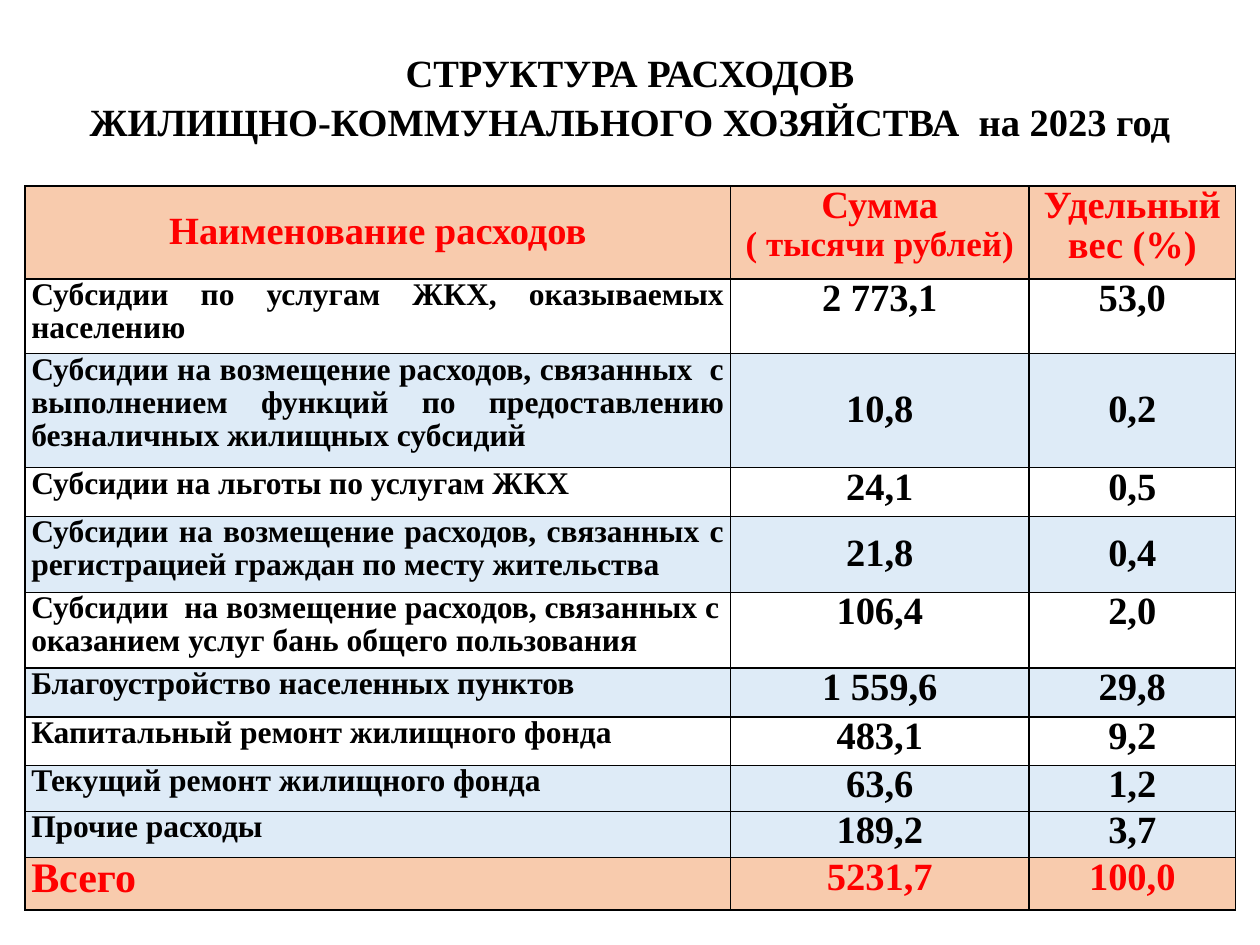
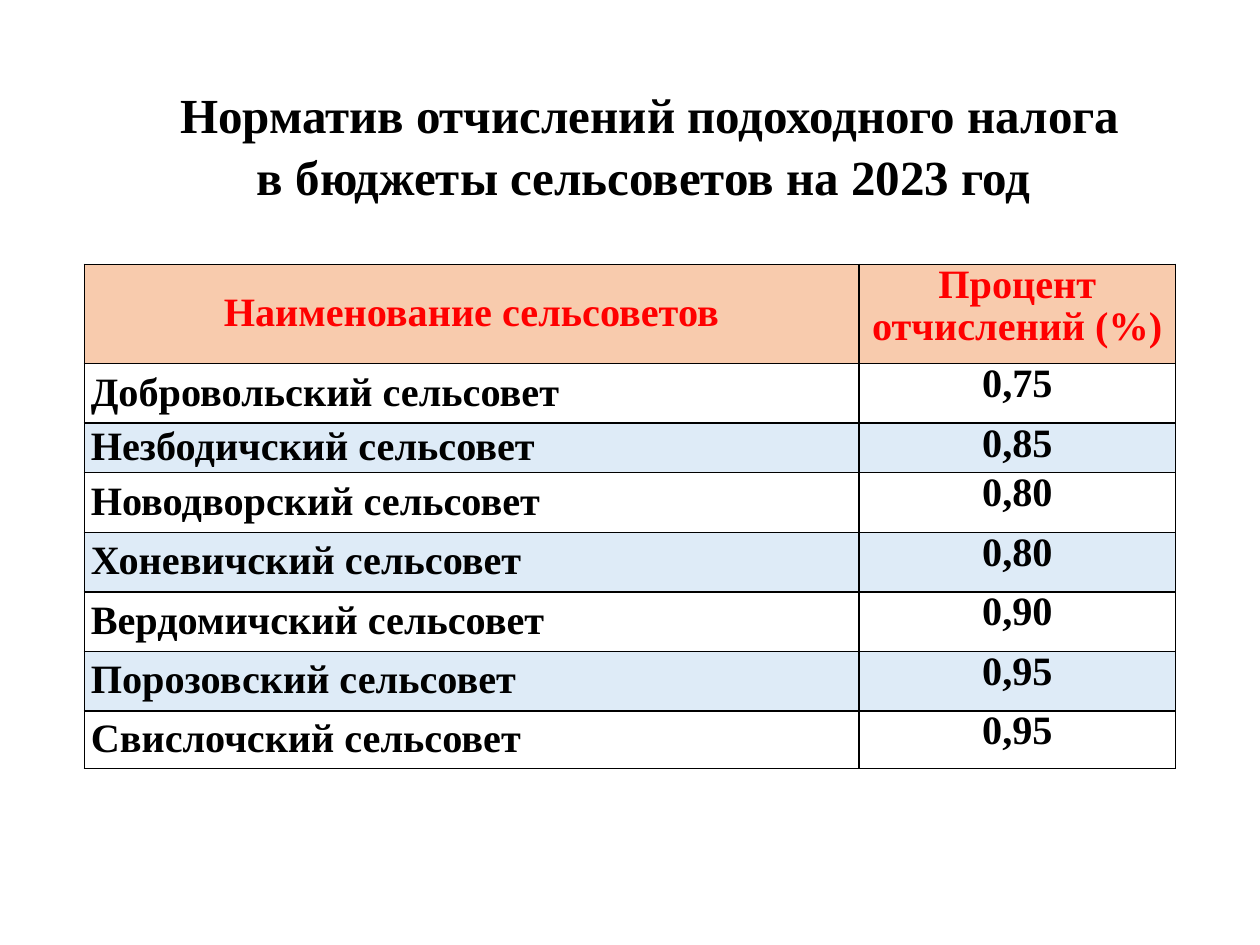
from dataclasses import dataclass
from itertools import cycle

from lxml.etree import SubElement
from pptx import Presentation
from pptx.dml.color import RGBColor
from pptx.enum.text import MSO_ANCHOR, PP_ALIGN
from pptx.oxml.ns import qn
from pptx.util import Cm, Pt

FONT = "Times New Roman"
COLOURS = {
    "text": "000000",
    "accent": "FF0000",
    "heading": "F8CBAD",
    "band": "DEEBF7",
    "plain": "FFFFFF",
}
LEFT, CENTER, JUSTIFY = PP_ALIGN.LEFT, PP_ALIGN.CENTER, PP_ALIGN.JUSTIFY
TOP, MIDDLE = MSO_ANCHOR.TOP, MSO_ANCHOR.MIDDLE


@dataclass
class Row:
    height: float
    texts: tuple
    fill: str = "plain"
    colour: str = "text"
    name_size: int = 18
    value_sizes: tuple = (22,)
    name_align: PP_ALIGN = LEFT
    name_anchor: MSO_ANCHOR = TOP
    value_anchor: MSO_ANCHOR = TOP


EXPENSE_ROWS = [
    Row(1.87, ("Наименование расходов", "Сумма\n( тысячи рублей)", "Удельный вес (%)"),
        "heading", "accent", 22, (22, 20), CENTER, MIDDLE),
    Row(1.51, ("Субсидии по услугам ЖКХ, оказываемых населению", "2 773,1", "53,0"),
        name_align=JUSTIFY),
    Row(2.3, ("Субсидии на возмещение расходов, связанных  с выполнением функций "
              "по предоставлению безналичных жилищных субсидий", "10,8", "0,2"),
        "band", name_align=JUSTIFY, value_anchor=MIDDLE),
    Row(0.98, ("Субсидии на льготы по услугам ЖКХ", "24,1", "0,5")),
    Row(1.53, ("Субсидии на возмещение расходов, связанных с регистрацией граждан "
               "по месту жительства", "21,8", "0,4"),
        "band", name_align=JUSTIFY, value_anchor=MIDDLE),
    Row(1.53, ("Субсидии  на возмещение расходов, связанных с оказанием услуг бань "
               "общего пользования", "106,4", "2,0")),
    Row(0.98, ("Благоустройство населенных пунктов", "1 559,6", "29,8"), "band"),
    Row(0.98, ("Капитальный ремонт жилищного фонда", "483,1", "9,2")),
    Row(0.93, ("Текущий ремонт жилищного фонда", "63,6", "1,2"), "band"),
    Row(0.93, ("Прочие расходы", "189,2", "3,7"), "band"),
    Row(1.06, ("Всего", "5231,7", "100,0"), "heading", "accent", 24),
]

COUNCILS = [
    ("Добровольский", "0,75", 1.2),
    ("Незбодичский", "0,85", 1.0),
    ("Новодворский", "0,80", 1.2),
    ("Хоневичский", "0,80", 1.2),
    ("Вердомичский", "0,90", 1.2),
    ("Порозовский", "0,95", 1.2),
    ("Свислочский", "0,95", 1.16),
]


def write_text(frame, text, *, sizes, colour="text", align=CENTER, spacing=0.95):
    frame.word_wrap = True
    for index, (line, size) in enumerate(zip(text.split("\n"), cycle(sizes))):
        paragraph = frame.add_paragraph() if index else frame.paragraphs[0]
        paragraph.alignment = align
        paragraph.line_spacing = spacing
        run = paragraph.add_run()
        run.text = line
        run.font.name = FONT
        run.font.size = Pt(size)
        run.font.bold = True
        run.font.color.rgb = RGBColor.from_string(COLOURS[colour])


def add_title(slide, text, box, size, anchor=TOP, bottom=0.13):
    frame = slide.shapes.add_textbox(*map(Cm, box)).text_frame
    frame.vertical_anchor = anchor
    frame.margin_bottom = Cm(bottom)
    write_text(frame, text, sizes=(size,), spacing=1.05)


def set_borders(cell):
    properties = cell._tc.get_or_add_tcPr()
    for position, side in enumerate(("a:lnL", "a:lnR", "a:lnT", "a:lnB")):
        line = SubElement(properties, qn(side), w=str(Pt(1)))
        fill = SubElement(line, qn("a:solidFill"))
        SubElement(fill, qn("a:srgbClr"), val=COLOURS["text"])
        properties.insert(position, line)


def fill_cell(cell, text, fill, anchor, **text_format):
    cell.fill.solid()
    cell.fill.fore_color.rgb = RGBColor.from_string(COLOURS[fill])
    cell.margin_left = cell.margin_right = Cm(0.13)
    cell.margin_top = cell.margin_bottom = 0
    cell.vertical_anchor = anchor
    write_text(cell.text_frame, text, **text_format)
    set_borders(cell)


def add_grid(slide, left, top, widths, rows):
    height = sum(row.height for row in rows)
    table = slide.shapes.add_table(
        len(rows), len(widths), Cm(left), Cm(top), Cm(sum(widths)), Cm(height)
    ).table
    table.first_row = table.horz_banding = False
    for column, width in zip(table.columns, widths):
        column.width = Cm(width)
    for table_row, row in zip(table.rows, rows):
        table_row.height = Cm(row.height)
        name_cell, *value_cells = table_row.cells
        name, *values = row.texts
        fill_cell(name_cell, name, row.fill, row.name_anchor, sizes=(row.name_size,),
                  colour=row.colour, align=row.name_align)
        for cell, value in zip(value_cells, values):
            fill_cell(cell, value, row.fill, row.value_anchor,
                      sizes=row.value_sizes, colour=row.colour)


def council_rows():
    heading = Row(2.0, ("Наименование сельсоветов", "Процент\nотчислений (%)"),
                  "heading", "accent", 23, (23,), CENTER, MIDDLE)
    return [heading] + [
        Row(height, (f"{name} сельсовет", percent), fill, name_size=23,
            value_sizes=(23,), name_align=JUSTIFY, name_anchor=MIDDLE)
        for (name, percent, height), fill in zip(COUNCILS, cycle(("plain", "band")))
    ]


def main():
    presentation = Presentation()
    presentation.slide_width, presentation.slide_height = Cm(25.4), Cm(19.05)
    blank = presentation.slide_layouts[6]

    slide = presentation.slides.add_slide(blank)
    add_grid(slide, 0.5, 3.75, (14.23, 6.01, 4.17), EXPENSE_ROWS)
    add_title(slide, "СТРУКТУРА РАСХОДОВ\nЖИЛИЩНО-КОММУНАЛЬНОГО ХОЗЯЙСТВА  на 2023 год",
              (0, 0.86, 25.4, 2.9), 22, MIDDLE, 0.89)

    slide = presentation.slides.add_slide(blank)
    add_grid(slide, 1.7, 5.33, (15.62, 6.38), council_rows())
    add_title(slide, "Норматив отчислений подоходного налога в бюджеты сельсоветов на 2023 год ",
              (3.1, 1.52, 19.99, 2.64), 28)

    presentation.save("out.pptx")


if __name__ == "__main__":
    main()
